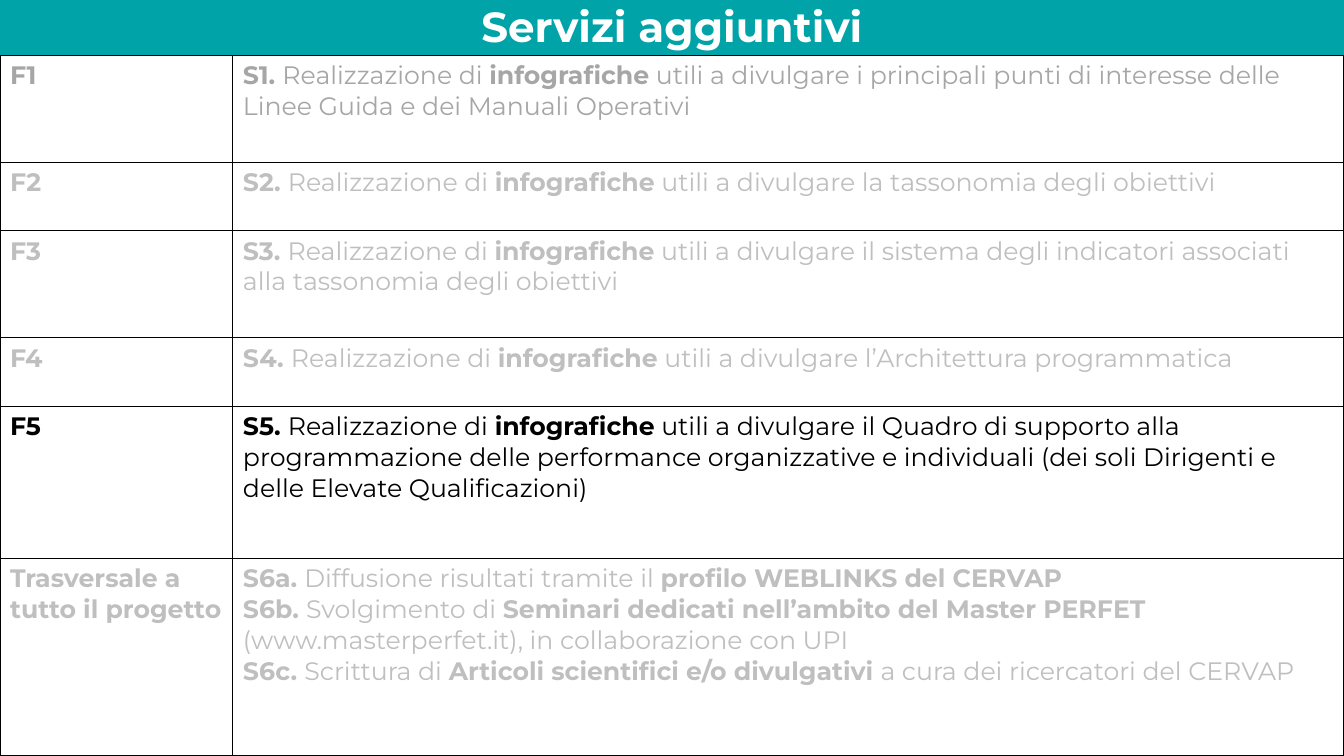
from dataclasses import dataclass

from lxml.etree import SubElement
from pptx import Presentation
from pptx.dml.color import RGBColor
from pptx.enum.text import MSO_ANCHOR, MSO_AUTO_SIZE, PP_ALIGN
from pptx.oxml.ns import qn
from pptx.util import Inches, Pt


@dataclass(frozen=True)
class Theme:
    font: str = "Montserrat"
    title_size: int = 30
    body_size: int = 18
    border_width: int = 1
    teal: str = "00A3A8"
    white: str = "FFFFFF"
    black: str = "000000"
    gray: str = "A6A6A6"
    light_gray: str = "BFBFBF"


THEME = Theme()
COLUMN_WIDTHS = (2.31, 11.02)
MAKING = "Realizzazione di "
INFOGRAPHICS = "infografiche"

# Each row: phase, colour, height, services as alternating bold and regular spans.
SERVICES = [
    ("F1", THEME.gray, 1.06, [
        ("S1. ", MAKING, INFOGRAPHICS,
         " utili a divulgare i principali punti di interesse delle "
         "Linee Guida e dei Manuali Operativi")]),
    ("F2", THEME.light_gray, 0.68, [
        ("S2. ", MAKING, INFOGRAPHICS,
         " utili a divulgare la tassonomia degli obiettivi")]),
    ("F3", THEME.light_gray, 1.06, [
        ("S3. ", MAKING, INFOGRAPHICS,
         " utili a divulgare il sistema degli indicatori associati "
         "alla tassonomia degli obiettivi")]),
    ("F4", THEME.light_gray, 0.68, [
        ("S4. ", MAKING, INFOGRAPHICS,
         " utili a divulgare l’Architettura programmatica")]),
    ("F5", THEME.black, 1.51, [
        ("S5. ", MAKING, INFOGRAPHICS,
         " utili a divulgare il Quadro di supporto alla programmazione "
         "delle performance organizzative e individuali "
         "(dei soli Dirigenti e delle Elevate Qualificazioni)")]),
    ("Trasversale a tutto il progetto", THEME.light_gray, 1.96, [
        ("S6a. ", "Diffusione risultati tramite il ",
         "profilo WEBLINKS del CERVAP"),
        ("S6b. ", "Svolgimento di ",
         "Seminari dedicati nell’ambito del Master PERFET ",
         "(www.masterperfet.it), in collaborazione con UPI"),
        ("S6c. ", "Scrittura di ", "Articoli scientifici e/o divulgativi ",
         "a cura dei ricercatori del CERVAP")]),
]


def add_span(para, text, size, color, bold):
    span = para.add_run()
    span.text = text
    span.font.name = THEME.font
    span.font.size = Pt(size)
    span.font.bold = bold
    span.font.color.rgb = RGBColor.from_string(color)


def add_title(page, text):
    title = page.shapes.title
    title.left, title.top = Inches(0), Inches(-0.03)
    title.width, title.height = Inches(13.33), Inches(0.58)
    title.fill.solid()
    title.fill.fore_color.rgb = RGBColor.from_string(THEME.teal)
    frame = title.text_frame
    frame.word_wrap = True
    frame.auto_size = MSO_AUTO_SIZE.NONE
    frame.vertical_anchor = MSO_ANCHOR.MIDDLE
    para = frame.paragraphs[0]
    para.alignment = PP_ALIGN.CENTER
    add_span(para, text, THEME.title_size, THEME.white, True)


def set_borders(cell):
    properties = cell._tc.get_or_add_tcPr()
    for position, side in enumerate(("lnL", "lnR", "lnT", "lnB")):
        line = SubElement(properties, qn(f"a:{side}"), w=str(Pt(THEME.border_width)))
        fill = SubElement(line, qn("a:solidFill"))
        SubElement(fill, qn("a:srgbClr"), val=THEME.black)
        properties.insert(position, line)


def fill_cell(cell, paragraphs, color):
    """Write paragraphs whose spans alternate between bold and regular."""
    cell.fill.background()
    set_borders(cell)
    frame = cell.text_frame
    for number, spans in enumerate(paragraphs):
        para = frame.add_paragraph() if number else frame.paragraphs[0]
        for index, text in enumerate(spans):
            add_span(para, text, THEME.body_size, color, index % 2 == 0)


def add_services_table(page):
    frame = page.shapes.add_table(
        len(SERVICES), len(COLUMN_WIDTHS),
        Inches(0), Inches(0.55), Inches(13.33), Inches(6.95))
    table = frame.table
    table.first_row = False
    table.horz_banding = False
    for column, width in zip(table.columns, COLUMN_WIDTHS):
        column.width = Inches(width)
    for row, (phase, color, height, services) in zip(table.rows, SERVICES):
        row.height = Inches(height)
        fill_cell(row.cells[0], [(phase,)], color)
        fill_cell(row.cells[1], services, color)


def main():
    deck = Presentation()
    deck.slide_width, deck.slide_height = Inches(13.33), Inches(7.5)
    title_only = deck.slide_layouts[5]
    page = deck.slides.add_slide(title_only)
    add_title(page, "Servizi aggiuntivi")
    add_services_table(page)
    deck.save("out.pptx")


if __name__ == "__main__":
    main()
